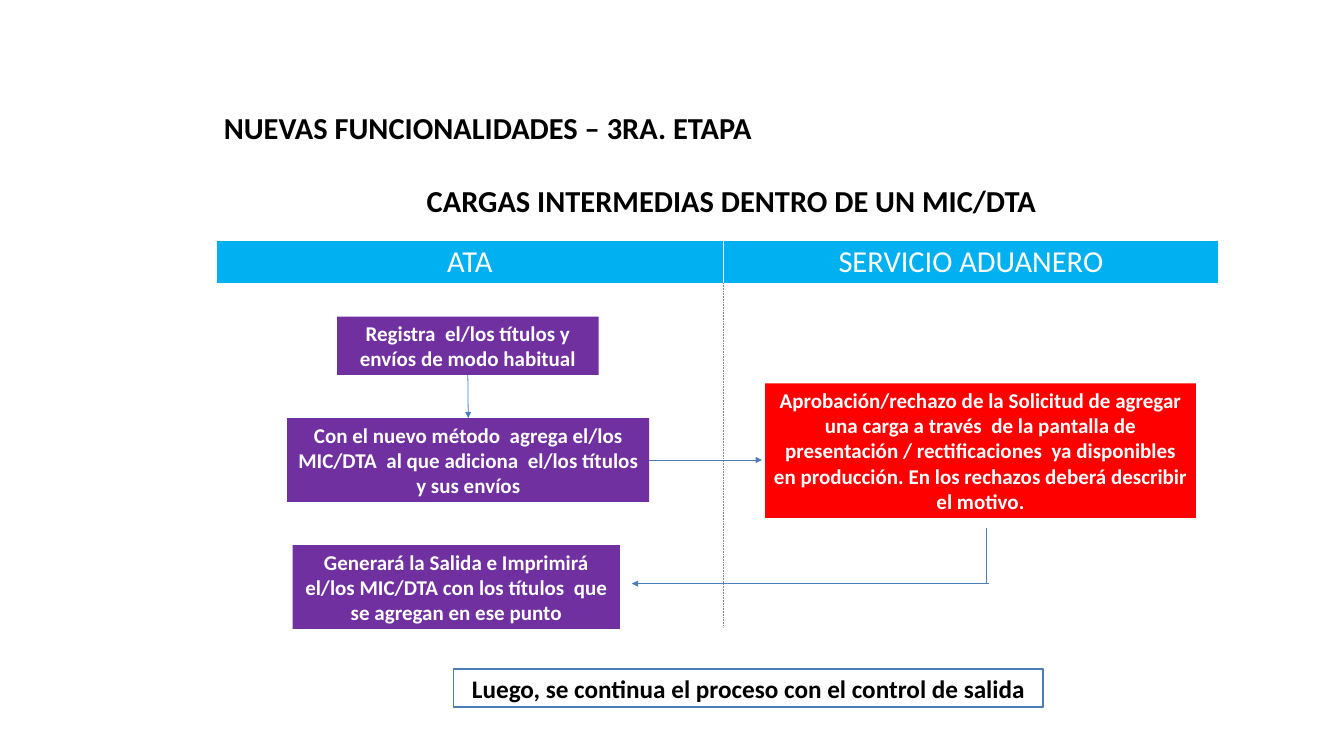
from dataclasses import dataclass
from lxml.etree import SubElement
from pptx import Presentation
from pptx.dml.color import RGBColor
from pptx.enum.shapes import MSO_CONNECTOR, MSO_SHAPE
from pptx.enum.text import MSO_ANCHOR, MSO_AUTO_SIZE, PP_ALIGN
from pptx.oxml.ns import qn
from pptx.util import Inches, Pt

WIDE, HIGH = 17.78, 10


@dataclass(frozen=True)
class Theme:
    face: str = "Calibri"
    ink: str = "000000"
    white: str = "FFFFFF"
    sky: str = "00B0F0"
    plum: str = "7030A0"
    red: str = "FF0000"
    blue: str = "4B7EBC"
    gray: str = "808080"
    head: int = 29
    note: int = 24
    body: int = 20


THEME = Theme()


def across(share):
    return Inches(WIDE * share / 100)


def down(share):
    return Inches(HIGH * share / 100)


def place(left, top, width, height):
    return across(left), down(top), across(width), down(height)


def color(code):
    return RGBColor.from_string(code)


def style(para, size, code, bold=True, align=PP_ALIGN.CENTER):
    para.alignment = align
    for run in para.runs:
        font = run.font
        font.name, font.size, font.bold = THEME.face, Pt(size), bold
        font.color.rgb = color(code)


def add_title(slide, first, second):
    title = slide.shapes.title
    title.left, title.top, title.width, title.height = place(16.09, 13.9, 76.72, 15.6)
    frame = title.text_frame
    frame.text = first
    frame.vertical_anchor = MSO_ANCHOR.TOP
    frame.auto_size = MSO_AUTO_SIZE.NONE
    style(frame.paragraphs[0], THEME.head, THEME.ink, align=PP_ALIGN.LEFT)
    para = frame.add_paragraph()
    para.text = second
    para.space_before = Pt(35)
    style(para, THEME.head, THEME.ink)


def add_edge(cell, side, code, width, dash="solid"):
    edge = SubElement(cell._tc.get_or_add_tcPr(), qn("a:ln" + side), w=str(Pt(width)))
    fill = SubElement(edge, qn("a:solidFill"))
    SubElement(fill, qn("a:srgbClr"), val=code)
    SubElement(edge, qn("a:prstDash"), val=dash)


def add_lanes(slide, names):
    widths, heights = (37.74, 36.84), (5.7, 45.3)
    spot = place(16.09, 31.8, sum(widths), sum(heights))
    table = slide.shapes.add_table(2, 2, *spot).table
    for row, height in zip(table.rows, heights):
        row.height = down(height)
    for col, width in enumerate(widths):
        table.columns[col].width = across(width)
        for row, code in enumerate((THEME.sky, THEME.white)):
            cell = table.cell(row, col)
            for side in "LRTB":
                inner = row == 1 and side == "RL"[col]
                if inner:
                    add_edge(cell, side, THEME.gray, 1.5, "dot")
                else:
                    add_edge(cell, side, THEME.white, 1)
            cell.fill.solid()
            cell.fill.fore_color.rgb = color(code)
            cell.margin_top = cell.margin_bottom = Inches(0.04)
        cell = table.cell(0, col)
        cell.text_frame.text = names[col]
        cell.vertical_anchor = MSO_ANCHOR.MIDDLE
        style(cell.text_frame.paragraphs[0], THEME.head, THEME.white, bold=False)


def add_box(slide, text, spot, fill=None):
    box = slide.shapes.add_shape(MSO_SHAPE.RECTANGLE, *place(*spot))
    box.shadow.inherit = False
    if fill:
        box.fill.solid()
        box.fill.fore_color.rgb = color(fill)
        box.line.fill.background()
        size, code = THEME.body, THEME.white
    else:
        box.fill.background()
        box.line.color.rgb = color(THEME.blue)
        box.line.width = Pt(1.75)
        size, code = THEME.note, THEME.ink
    frame = box.text_frame
    frame.word_wrap = True
    frame.text = text
    style(frame.paragraphs[0], size, code)
    return box


def add_line(slide, start, end, arrow=True):
    points = across(start[0]), down(start[1]), across(end[0]), down(end[1])
    line = slide.shapes.add_connector(MSO_CONNECTOR.STRAIGHT, *points)
    line.line.color.rgb = color(THEME.blue)
    line.line.width = Pt(0.75)
    if arrow:
        SubElement(line.line._get_or_add_ln(), qn("a:tailEnd"), type="triangle")
    SubElement(line._element.spPr, qn("a:effectLst"))
    return line


def main():
    deck = Presentation()
    deck.slide_width, deck.slide_height = Inches(WIDE), Inches(HIGH)
    slide = deck.slides.add_slide(deck.slide_layouts[5])
    add_title(slide, "NUEVAS FUNCIONALIDADES – 3RA. ETAPA",
              "CARGAS INTERMEDIAS DENTRO DE UN MIC/DTA")
    add_lanes(slide, ("ATA", "SERVICIO ADUANERO"))

    enter = add_box(slide, "Registra  el/los títulos y envíos de modo habitual",
                    (25.08, 41.9, 19.46, 7.7), THEME.plum)
    attach = add_box(slide, "Con el nuevo método  agrega el/los MIC/DTA  al que "
                     "adiciona  el/los títulos y sus envíos",
                     (21.37, 55.3, 26.94, 11.1), THEME.plum)
    add_box(slide, "Generará la Salida e Imprimirá el/los MIC/DTA con los "
            "títulos  que se agregan en ese punto",
            (21.77, 72.1, 24.35, 11.1), THEME.plum)
    add_box(slide, "Aprobación/rechazo de la Solicitud de agregar una carga a "
            "través  de la pantalla de presentación / rectificaciones  ya "
            "disponibles en producción. En los rechazos deberá describir el motivo.",
            (56.92, 50.7, 32.06, 17.8), THEME.red)

    link = add_line(slide, (34.81, 49.6), (34.84, 55.3))
    link.begin_connect(enter, 2)
    link.end_connect(attach, 0)
    link = add_line(slide, (48.31, 60.85), (56.69, 60.85))
    link.begin_connect(attach, 3)
    add_line(slide, (73.57, 77.2), (47.02, 77.2))
    add_line(slide, (73.4, 69.8), (73.4, 77.2), arrow=False)

    add_box(slide, "Luego, se continua el proceso con el control de salida",
            (33.75, 88.5, 43.87, 5))
    deck.save("out.pptx")


if __name__ == "__main__":
    main()
